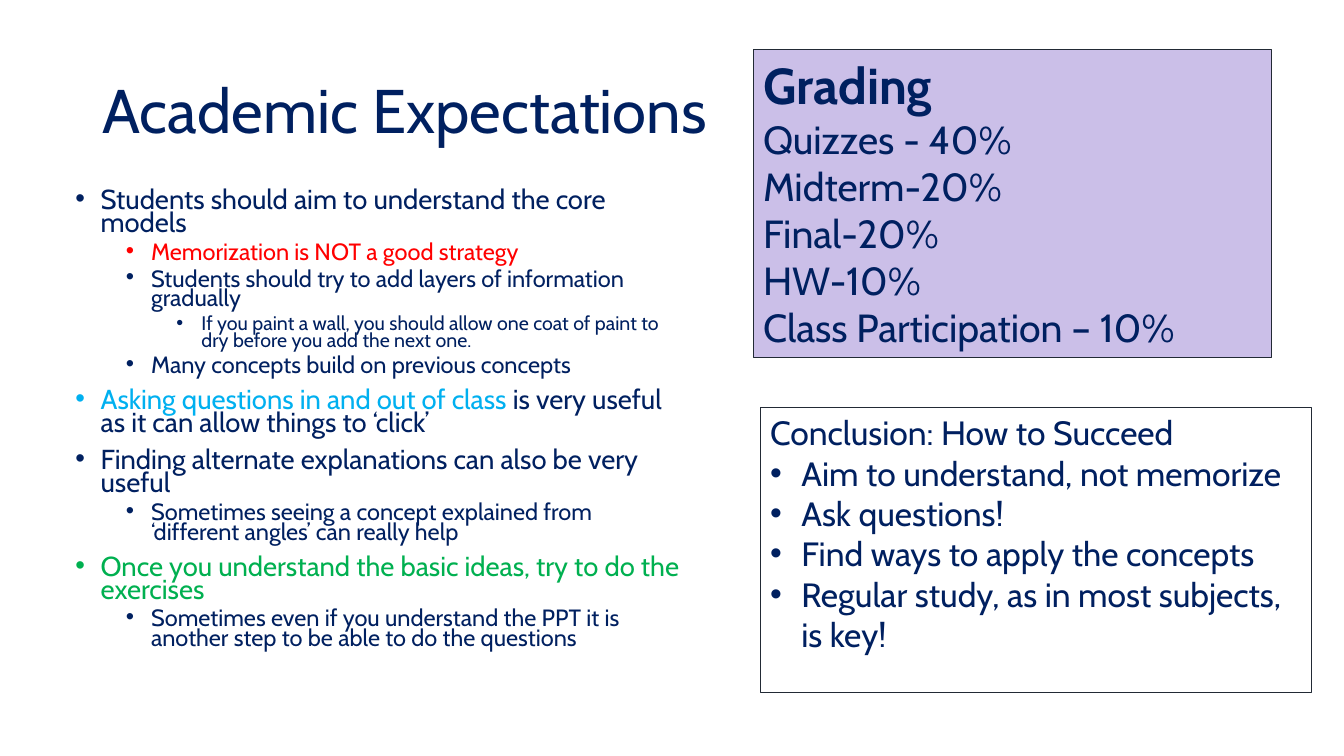
import pptx
import pptx.util
import pptx.dml.color
import pptx.enum.shapes
import pptx.enum.text
from dataclasses import dataclass
from lxml import etree

Inches = pptx.util.Inches
Pt = pptx.util.Pt


@dataclass(frozen=True)
class Theme:
    font: str = "Cabin"
    navy: str = "002060"
    red: str = "FF0000"
    blue: str = "00B0F0"
    green: str = "00B050"
    lilac: str = "CBBFE8"
    edge: str = "222A35"
    title: float = 44
    head: float = 36
    grade: float = 28
    advice: float = 24
    levels: tuple = (19.6, 16.8, 14)


THEME = Theme()

# Each point: level, then runs of (text, colour)
POINTS = [
    (0, [("Students should aim to understand the core models", THEME.navy)]),
    (1, [("Memorization is NOT a good strategy", THEME.red)]),
    (1, [("Students should try to add layers of information gradually", THEME.navy)]),
    (2, [("If you paint a wall, you should allow one coat of paint to dry "
          "before you add the next one.", THEME.navy)]),
    (1, [("Many concepts build on previous concepts", THEME.navy)]),
    (0, [("Asking questions in and out of class ", THEME.blue),
         ("is very useful as it can allow things to ‘click’", THEME.navy)]),
    (0, [("Finding alternate explanations can also be very useful", THEME.navy)]),
    (1, [("Sometimes seeing a concept explained from ‘different angles’ "
          "can really help", THEME.navy)]),
    (0, [("Once you understand the basic ideas, try to do the exercises", THEME.green)]),
    (1, [("Sometimes even if you understand the PPT it is another step "
          "to be able to do the questions", THEME.navy)]),
]
GRADES = ["Quizzes - 40%", "Midterm-20%", "Final-20%", "HW-10%",
          "Class Participation – 10%"]
ADVICE = ["Aim to understand, not memorize", "Ask questions!",
          "Find ways to apply the concepts",
          "Regular study, as in most subjects, is key!"]


def rgb(code):
    return pptx.dml.color.RGBColor.from_string(code)


def bullet(para, left, hang):
    """Give a paragraph a round bullet with a hanging indent."""
    props = para._p.get_or_add_pPr()
    props.set("marL", str(Inches(left)))
    props.set("indent", str(-Inches(hang)))
    for tag, key, value in (("buFont", "typeface", "Arial"), ("buChar", "char", "•")):
        node = etree.SubElement(props, pptx.oxml.ns.qn("a:" + tag))
        node.set(key, value)


def write(para, text, size, color=THEME.navy, bold=False):
    """Add one styled run to a paragraph."""
    run = para.add_run()
    run.text = text
    style = {"name": THEME.font, "size": Pt(size), "bold": bold}
    for key, value in style.items():
        setattr(run.font, key, value)
    run.font.color.rgb = rgb(color)


def lines(frame, count):
    """Return the frame's paragraphs, left aligned, extended to count."""
    for _ in range(count - 1):
        frame.add_paragraph()
    for para in frame.paragraphs:
        para.alignment = pptx.enum.text.PP_ALIGN.LEFT
    return frame.paragraphs


def panel(slide, box, fill=None):
    """Draw a thin-edged rectangle and return its text frame."""
    shape = slide.shapes.add_shape(
        pptx.enum.shapes.MSO_SHAPE.RECTANGLE, *map(Inches, box))
    shape.shadow.inherit = False
    if fill:
        shape.fill.solid()
        shape.fill.fore_color.rgb = rgb(fill)
    else:
        shape.fill.background()
    shape.line.color.rgb = rgb(THEME.edge)
    shape.line.width = Pt(0.75)
    frame = shape.text_frame
    frame.word_wrap = True
    frame.vertical_anchor = pptx.enum.text.MSO_ANCHOR.TOP
    return frame


def title(slide, box):
    frame = slide.shapes.add_textbox(*map(Inches, box)).text_frame
    frame.word_wrap = True
    frame.vertical_anchor = pptx.enum.text.MSO_ANCHOR.MIDDLE
    para = frame.paragraphs[0]
    para.line_spacing = 0.9
    write(para, "Academic Expectations", THEME.title)


def outline(slide, box):
    frame = slide.shapes.add_textbox(*map(Inches, box)).text_frame
    frame.word_wrap = True
    paras = lines(frame, len(POINTS))
    for i, (para, (level, runs)) in enumerate(zip(paras, POINTS)):
        para.level = level
        para.line_spacing = 0.7
        if i:
            para.space_before = Pt(5 if level else 10)
        bullet(para, 0.25 + 0.5 * level, 0.25)
        for text, color in runs:
            write(para, text, THEME.levels[level], color)


def grading(slide, box):
    head, *rest = lines(panel(slide, box, THEME.lilac), len(GRADES) + 1)
    write(head, "Grading", THEME.head, bold=True)
    for para, text in zip(rest, GRADES):
        write(para, text, THEME.grade)


def closing(slide, box):
    head, *rest = lines(panel(slide, box), len(ADVICE) + 1)
    write(head, "Conclusion: How to Succeed", THEME.advice)
    for para, text in zip(rest, ADVICE):
        bullet(para, 0.31, 0.31)
        write(para, text, THEME.advice)


def main():
    deck = pptx.Presentation()
    deck.slide_width, deck.slide_height = Inches(13.33), Inches(7.5)
    slide = deck.slides.add_slide(deck.slide_layouts[6])
    # Left side
    title(slide, (0.92, 0.4, 11.5, 1.45))
    outline(slide, (0.65, 1.85, 6.19, 4.76))
    # Right side
    grading(slide, (7.47, 0.49, 5.14, 3.06))
    closing(slide, (7.54, 4.04, 5.47, 2.83))
    deck.save("out.pptx")


if __name__ == "__main__":
    main()
